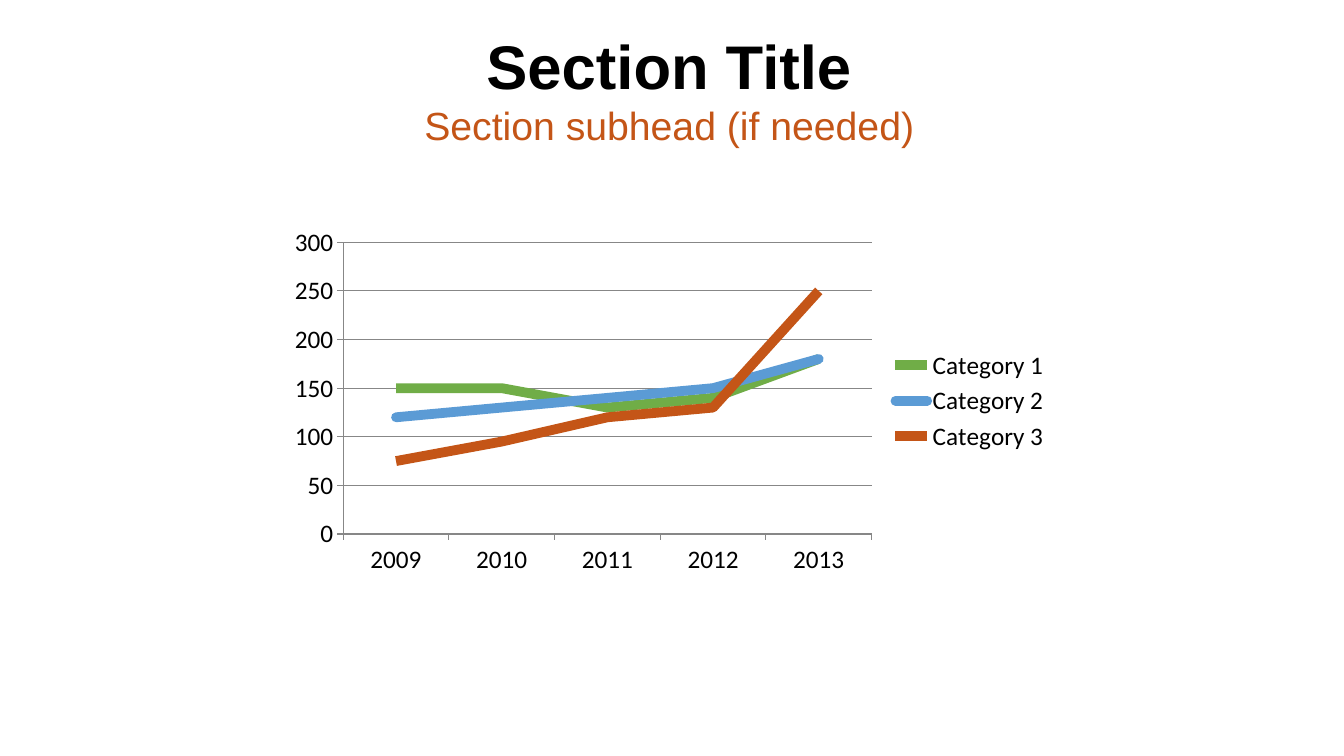
from dataclasses import dataclass

from pptx import Presentation
from pptx.chart.data import CategoryChartData
from pptx.dml.color import RGBColor
from pptx.enum.chart import XL_CHART_TYPE, XL_LEGEND_POSITION, XL_MARKER_STYLE, XL_TICK_MARK
from pptx.enum.text import MSO_ANCHOR, PP_ALIGN
from pptx.util import Pt


@dataclass(frozen=True)
class Theme:
    black: str = "000000"
    grey: str = "878787"
    green: str = "70AD47"
    blue: str = "5B9BD5"
    orange: str = "C45517"
    text_font: str = "Arial"
    chart_font: str = "Calibri"
    title_size: float = 44
    subhead_size: float = 28
    chart_size: float = 18
    series_width: float = 7
    axis_width: float = 0.75


class SlideBuilder:
    def __init__(self, s, theme):
        self.s = s
        self.theme = theme

    def set_font(self, font, name, size, color, bold=False):
        for key, value in {"name": name, "size": Pt(size), "bold": bold}.items():
            setattr(font, key, value)
        font.color.rgb = RGBColor.from_string(color)

    def set_line(self, line, color, width):
        line.color.rgb = RGBColor.from_string(color)
        line.width = Pt(width)

    def place(self, shape, box):
        for key, value in zip(("left", "top", "width", "height"), box):
            setattr(shape, key, Pt(value))

    def set_text(self, shape, text, size, color, bold=False, anchor=MSO_ANCHOR.TOP, spacing=1.0):
        tf = shape.text_frame
        tf.word_wrap = True
        tf.vertical_anchor = anchor
        p = tf.paragraphs[0]
        p.alignment = PP_ALIGN.CENTER
        p.line_spacing = spacing
        r = p.add_run()
        r.text = text
        self.set_font(r.font, self.theme.text_font, size, color, bold)

    def title(self, text, box):
        title = self.s.shapes.title
        self.place(title, box)
        self.set_text(title, text, self.theme.title_size, self.theme.black, bold=True, spacing=0.9)

    def subhead(self, text, box):
        tb = self.s.shapes.add_textbox(*map(Pt, box))
        self.set_text(tb, text, self.theme.subhead_size, self.theme.orange, anchor=MSO_ANCHOR.MIDDLE)

    def line_chart(self, years, series, box):
        """Draw series given as (name, values, color, line cap)."""
        t = self.theme
        data = CategoryChartData()
        data.categories = years
        for name, values, _, _ in series:
            data.add_series(name, values)
        chart = self.s.shapes.add_chart(XL_CHART_TYPE.LINE, *map(Pt, box), data).chart
        chart.has_title = False
        self.set_font(chart.font, t.chart_font, t.chart_size, t.black)

        chart.has_legend = True
        chart.legend.position = XL_LEGEND_POSITION.RIGHT
        chart.legend.include_in_layout = False
        self.set_font(chart.legend.font, t.chart_font, t.chart_size, t.black)

        for axis in (chart.category_axis, chart.value_axis):
            axis.major_tick_mark = XL_TICK_MARK.OUTSIDE
            axis.minor_tick_mark = XL_TICK_MARK.NONE
            self.set_line(axis.format.line, t.grey, t.axis_width)
        chart.category_axis.has_major_gridlines = False
        values_axis = chart.value_axis
        for key, value in {"minimum_scale": 0, "maximum_scale": 300, "major_unit": 50}.items():
            setattr(values_axis, key, value)
        values_axis.has_major_gridlines = True
        self.set_line(values_axis.major_gridlines.format.line, t.grey, t.axis_width)

        plot = chart.plots[0]
        plot.vary_by_categories = False
        for line, (_, _, color, cap) in zip(plot.series, series):
            line.smooth = False
            line.marker.style = XL_MARKER_STYLE.NONE
            self.set_line(line.format.line, color, t.series_width)
            ln = line.format.line._get_or_add_ln()
            ln.set("cap", cap)


def main():
    theme = Theme()
    prs = Presentation()
    prs.slide_width, prs.slide_height = Pt(960), Pt(540)
    slide = SlideBuilder(prs.slides.add_slide(prs.slide_layouts[5]), theme)

    slide.line_chart(
        ["2009", "2010", "2011", "2012", "2013"],
        [
            ("Category 1", (150, 150, 130, 140, 180), theme.green, "flat"),
            ("Category 2", (120, 130, 140, 150, 180), theme.blue, "rnd"),
            ("Category 3", (75, 95, 120, 130, 250), theme.orange, "flat"),
        ],
        (199.5, 157, 557.5, 258.5),
    )
    slide.title("Section Title", (154, 22.5, 648, 67.5))
    slide.subhead("Section subhead (if needed)", (154, 67.5, 648, 43))
    prs.save("out.pptx")


if __name__ == "__main__":
    main()
